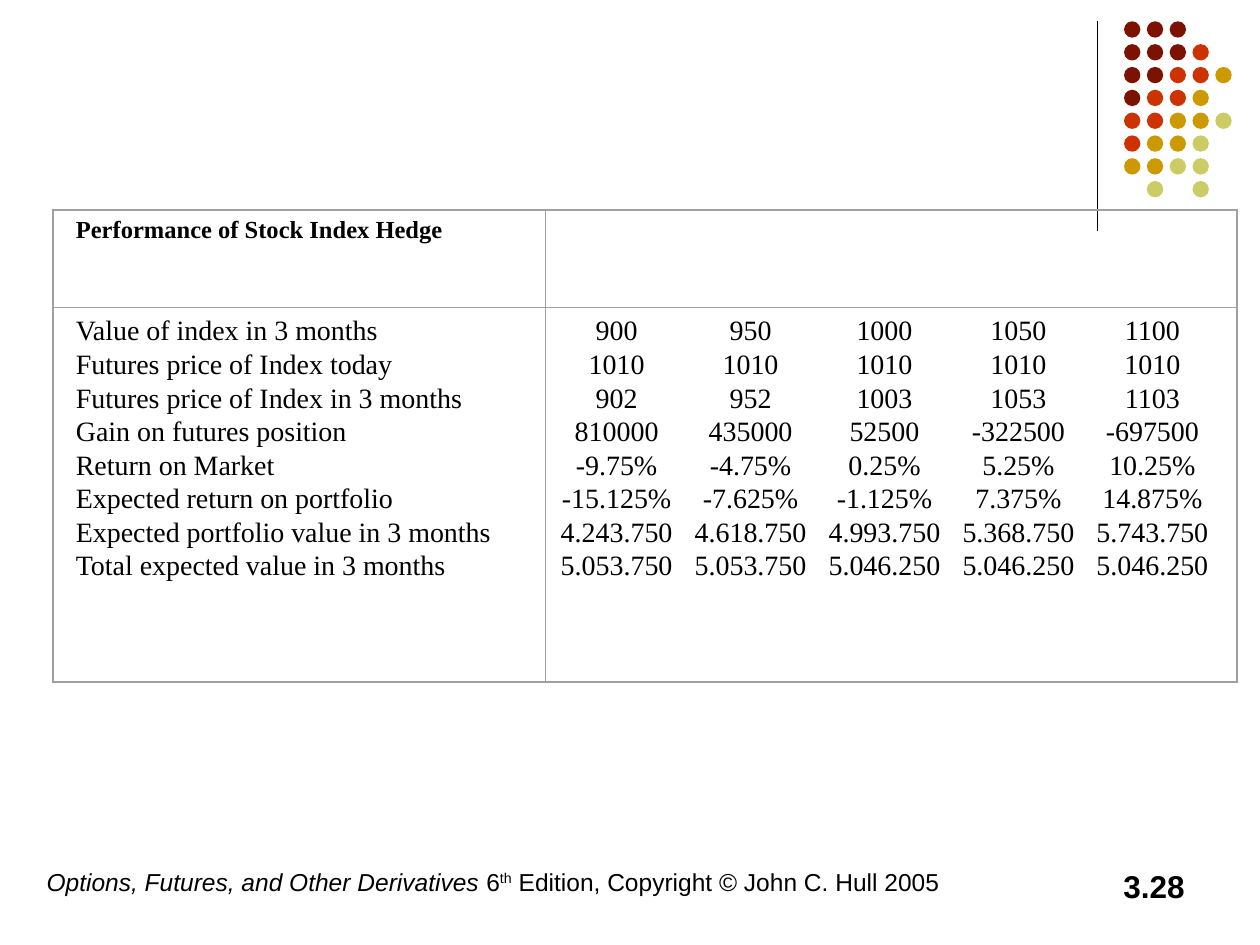
from dataclasses import dataclass

from lxml.etree import SubElement
from pptx import Presentation
from pptx.dml.color import RGBColor as Rgb
from pptx.enum.shapes import MSO_CONNECTOR as Link, MSO_SHAPE as Shape
from pptx.enum.text import PP_ALIGN as Align
from pptx.oxml import parse_xml
from pptx.oxml.ns import nsdecls, qn
from pptx.util import Cm, Pt


@dataclass(frozen=True)
class Theme:
    ink: str = "000000"
    grid: str = "A0A0A0"
    dots: tuple = ("7C1302", "CC3300", "CC9900", "CCCC66")
    sans: str = "Arial"
    serif: str = "Times New Roman"
    small: int = 14
    body: int = 16
    page: int = 18
    lead: float = 19.2


THEME = Theme()

# Each digit picks a dot colour; a point leaves a gap.
DOTS = ("000", "0001", "00112", "0112", "11223", "1223", "2233", ".3.3")

LABELS = (
    "Value of index in 3 months",
    "Futures price of Index today",
    "Futures price of Index in 3 months",
    "Gain on futures position",
    "Return on Market",
    "Expected return on portfolio",
    "Expected portfolio value in 3 months",
    "Total expected value in 3 months",
)
VALUES = (
    ("900", "950", "1000", "1050", "1100"),
    ("1010", "1010", "1010", "1010", "1010"),
    ("902", "952", "1003", "1053", "1103"),
    ("810000", "435000", "52500", "-322500", "-697500"),
    ("-9.75%", "-4.75%", "0.25%", "5.25%", "10.25%"),
    ("-15.125%", "-7.625%", "-1.125%", "7.375%", "14.875%"),
    ("4.243.750", "4.618.750", "4.993.750", "5.368.750", "5.743.750"),
    ("5.053.750", "5.053.750", "5.046.250", "5.046.250", "5.046.250"),
)
STOPS = [1.23 + 2.7 * col for col in range(5)]


def style(run, face, size, bold=False, italic=False):
    font = run.font
    font.name, font.size = face, Pt(size)
    font.bold, font.italic = bold, italic
    font.color.rgb = Rgb.from_string(THEME.ink)


def add_rule(slide):
    line = slide.shapes.add_connector(
        Link.STRAIGHT, Cm(22.12), Cm(0.43), Cm(22.12), Cm(4.65))
    line.line.color.rgb = Rgb.from_string(THEME.ink)
    line.line.width = Pt(0.75)
    SubElement(line._element.spPr, qn("a:effectLst"))


def add_dots(slide):
    size, step = Cm(0.33), 0.46
    group = slide.shapes.add_group_shape()
    for row, marks in enumerate(DOTS):
        for col, mark in enumerate(marks):
            if mark == ".":
                continue
            dot = group.shapes.add_shape(
                Shape.OVAL, Cm(22.66 + col * step), Cm(0.43 + row * step),
                size, size)
            dot.shadow.inherit = False
            dot.fill.solid()
            dot.fill.fore_color.rgb = Rgb.from_string(THEME.dots[int(mark)])
            dot.line.fill.background()


def add_box(slide, left, width):
    """Return the first paragraph of a wrapping box on the footer line."""
    box = slide.shapes.add_textbox(Cm(left), Cm(17.35), Cm(width), Cm(1.27))
    box.text_frame.word_wrap = True
    return box.text_frame.paragraphs[0]


def add_footer(slide):
    para = add_box(slide, 0.69, 21)
    parts = ("Options, Futures, and Other Derivatives", " 6", "th",
             " Edition, Copyright © John C. Hull 2005")
    for index, text in enumerate(parts):
        run = para.add_run()
        run.text = text
        style(run, THEME.sans, THEME.small, italic=index == 0)
        if text == "th":
            run._r.get_or_add_rPr().set("baseline", "30000")

    page = add_box(slide, 18.21, 5.92)
    page.text = "3.28"
    page.alignment = Align.RIGHT
    style(page.runs[0], THEME.sans, THEME.page, bold=True)


def set_edges(cell, row, col):
    """Draw outer edges of the two by two grid heavier than inner ones."""
    cell.fill.background()
    props = cell._tc.get_or_add_tcPr()
    outer = {"lnL": col == 0, "lnR": col == 1, "lnT": row == 0, "lnB": row == 1}
    for index, (tag, heavy) in enumerate(outer.items()):
        width = Pt(1.25 if heavy else 0.5)
        props.insert(index, parse_xml(
            f'<a:{tag} {nsdecls("a")} w="{width}"><a:solidFill>'
            f'<a:srgbClr val="{THEME.grid}"/></a:solidFill></a:{tag}>'))


def set_tabs(para):
    tabs = SubElement(para._p.get_or_add_pPr(), qn("a:tabLst"))
    for stop in STOPS:
        SubElement(tabs, qn("a:tab"), pos=str(Cm(stop)), algn="ctr")


def fill_cell(cell, lines, tabbed=False):
    frame = cell.text_frame
    frame.text = "\n".join(lines)
    for para in frame.paragraphs:
        if tabbed:
            set_tabs(para)
        para.line_spacing = Pt(THEME.lead)
        style(para.runs[0], THEME.serif, THEME.body)


def add_hedge(slide):
    frame = slide.shapes.add_table(
        2, 2, Cm(1.07), Cm(4.24), Cm(23.86), Cm(9.5))
    table = frame.table
    table.first_row = table.horz_banding = False
    for col, width in enumerate((9.93, 13.93)):
        table.columns[col].width = Cm(width)
    for row, height in enumerate((1.95, 7.55)):
        table.rows[row].height = Cm(height)
        for col, left in enumerate((0.46, 0.2)):
            cell = table.cell(row, col)
            cell.margin_left, cell.margin_right = Cm(left), Cm(0.2)
            set_edges(cell, row, col)

    head = table.cell(0, 0).text_frame.paragraphs[0]
    head.text = "Performance of Stock Index Hedge"
    style(head.runs[0], THEME.serif, THEME.small, bold=True)
    fill_cell(table.cell(1, 0), LABELS)
    rows = ["".join("\t" + value for value in row) for row in VALUES]
    fill_cell(table.cell(1, 1), rows, tabbed=True)


def main():
    deck = Presentation()
    deck.slide_width, deck.slide_height = Cm(25.4), Cm(19.05)
    slide = deck.slides.add_slide(deck.slide_layouts[6])
    add_rule(slide)
    add_dots(slide)
    add_footer(slide)
    add_hedge(slide)
    deck.save("out.pptx")


if __name__ == "__main__":
    main()
